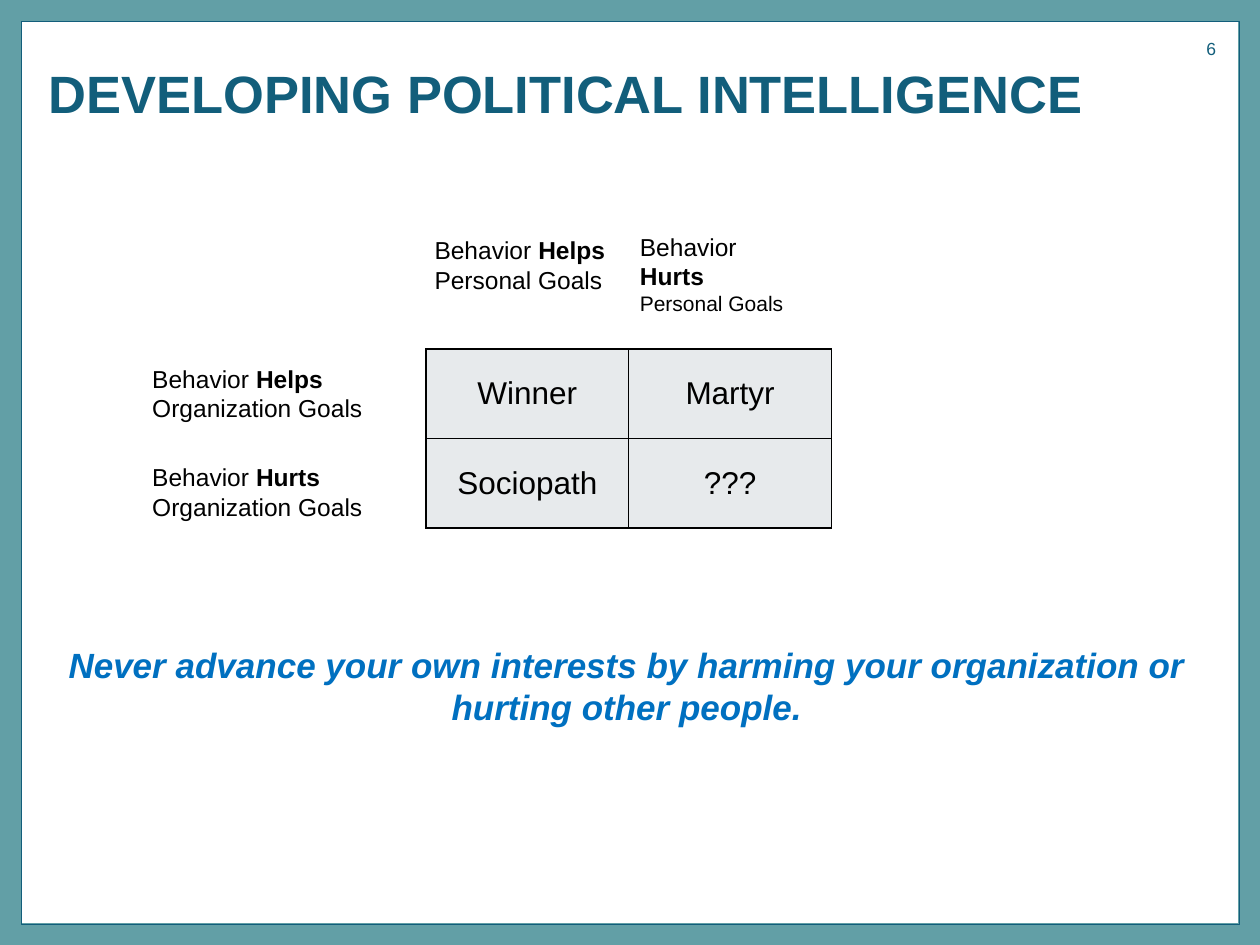
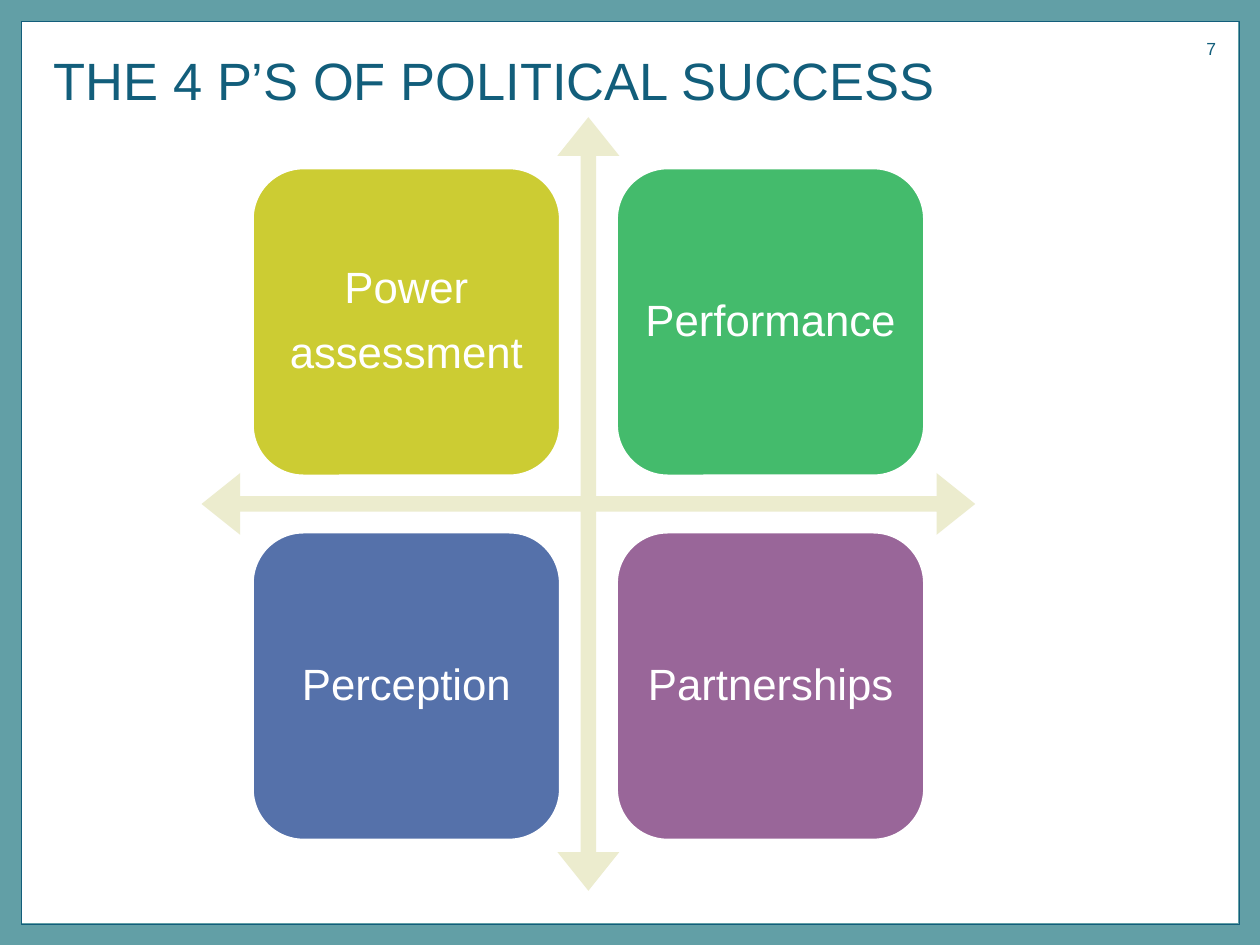
import pptx
import pptx.chart.data
import pptx.dml.color
import pptx.enum.shapes
import pptx.enum.text
import pptx.oxml.ns
import pptx.util
from lxml import etree

Inches, Pt = pptx.util.Inches, pptx.util.Pt
ALIGN, ANCHOR = pptx.enum.text.PP_ALIGN, pptx.enum.text.MSO_ANCHOR
SHAPE = pptx.enum.shapes.MSO_SHAPE

FONT = "Arial"
COLORS = {
    "frame": "629FA6", "title": "125E7B", "text": "000000", "cell": "E7EAEC",
    "quote": "0070C0", "arrow": "ECECCE", "white": "FFFFFF",
    "power": "CCCC33", "performance": "44BB6C",
    "perception": "5571AA", "partnerships": "996699",
}


def rgb(name):
    return pptx.dml.color.RGBColor.from_string(COLORS[name])


def style(paragraph, size, color, align=ALIGN.LEFT, bold=False, italic=False):
    paragraph.alignment = align
    font = paragraph.font
    font.name, font.size, font.bold, font.italic = FONT, Pt(size), bold, italic
    font.color.rgb = rgb(color)


def add_text(slide, box, lines, size, color, anchor=ANCHOR.TOP, wrap=True, **options):
    """Each line is a string or a list of (text, bold) runs."""
    frame = slide.shapes.add_textbox(*map(Inches, box)).text_frame
    frame.word_wrap, frame.vertical_anchor = wrap, anchor
    for index, line in enumerate(lines):
        paragraph = frame.add_paragraph() if index else frame.paragraphs[0]
        for text, bold in [(line, None)] if isinstance(line, str) else line:
            run = paragraph.add_run()
            run.text, run.font.bold = text, bold
        style(paragraph, size, color, **options)
    return frame


def add_shape(slide, kind, box, fill=None, line=None, width=1):
    shape = slide.shapes.add_shape(kind, *map(Inches, box))
    shape.shadow.inherit = False
    if fill:
        shape.fill.solid()
        shape.fill.fore_color.rgb = rgb(fill)
    else:
        shape.fill.background()
    if line:
        shape.line.color.rgb = rgb(line)
        shape.line.width = Pt(width)
    else:
        shape.line.fill.background()
    return shape


def add_base(presentation, title, number, title_box, bold=False):
    """Blank slide with the double frame, title and page number."""
    slide = presentation.slides.add_slide(presentation.slide_layouts[6])
    add_shape(slide, SHAPE.RECTANGLE, (0, 0, 10, 7.5), line="frame", width=25)
    add_shape(slide, SHAPE.RECTANGLE, (0.17, 0.17, 9.67, 7.17), line="title", width=0.75)
    add_text(slide, title_box, [title], 30, "title", ANCHOR.BOTTOM, bold=bold)
    add_text(slide, (9.33, 0.25, 0.42, 0.4), [str(number)], 10, "title", align=ALIGN.RIGHT)
    return slide


def add_borders(cell):
    properties = cell._tc.get_or_add_tcPr()
    for side in ("lnL", "lnR", "lnT", "lnB"):
        line = etree.SubElement(properties, pptx.oxml.ns.qn(f"a:{side}"), w=str(Pt(1)))
        fill = etree.SubElement(line, pptx.oxml.ns.qn("a:solidFill"))
        etree.SubElement(fill, pptx.oxml.ns.qn("a:srgbClr"), val=COLORS["text"])


def add_outcome_table(slide, box, rows):
    table = slide.shapes.add_table(len(rows), len(rows[0]), *map(Inches, box)).table
    table.first_row = table.horz_banding = False
    for row_index, row in enumerate(rows):
        for column_index, text in enumerate(row):
            cell = table.cell(row_index, column_index)
            add_borders(cell)
            cell.fill.solid()
            cell.fill.fore_color.rgb = rgb("cell")
            cell.vertical_anchor = ANCHOR.MIDDLE
            cell.text = text
            style(cell.text_frame.paragraphs[0], 18, "text", ALIGN.CENTER)


def add_behavior_matrix(slide, box):
    """Outcome table with its row and column labels placed around it."""
    left, top, width, height = box
    add_outcome_table(slide, box, [["Winner", "Martyr"], ["Sociopath", "???"]])

    def add_label(offset_x, offset_y, label_width, effect, goals, wrap=True):
        label_box = (left + offset_x, top + offset_y, label_width, 0.57)
        lines = [[("Behavior ", False), (effect, True)], goals]
        return add_text(slide, label_box, lines, 14, "text", wrap=wrap)

    for row, effect in enumerate(("Helps", "Hurts")):
        add_label(-2.27, 0.07 + row * 0.78, 1.88, effect, "Organization Goals", wrap=False)
    add_label(-0.03, -0.95, 1.75, "Helps", "Personal Goals")
    hurts = add_label(1.6, -0.98, 1.48, "Hurts", "Personal Goals")
    hurts.paragraphs[1].font.size = Pt(12)


def add_tile(slide, box, lines, color):
    tile = add_shape(slide, SHAPE.ROUNDED_RECTANGLE, box, color, "white", 2)
    frame = tile.text_frame
    frame.word_wrap, frame.vertical_anchor = True, ANCHOR.MIDDLE
    frame.margin_left = frame.margin_right = Inches(0.08)
    for index, line in enumerate(lines):
        paragraph = frame.add_paragraph() if index else frame.paragraphs[0]
        paragraph.text = line
        paragraph.line_spacing, paragraph.space_after = 0.9, Pt(10)
        style(paragraph, 25, "white", ALIGN.CENTER)


def add_quadrants(slide, box, tiles, margin=0.4, gap=0.44):
    """Four-way arrow with one tile in each quadrant of a square box."""
    left, top, side, _ = box
    arrow = add_shape(slide, SHAPE.QUAD_ARROW, box, "arrow")
    for index, value in enumerate((0.02, 0.04, 0.05)):
        arrow.adjustments[index] = value
    size = (side - 2 * margin - gap) / 2
    for index, (lines, color) in enumerate(tiles):
        row, column = divmod(index, 2)
        tile_box = (left + margin + column * (size + gap),
                    top + margin + row * (size + gap), size, size)
        add_tile(slide, tile_box, lines, color)


def build_intelligence(presentation):
    slide = add_base(presentation, "DEVELOPING POLITICAL INTELLIGENCE", 6,
                     (0.29, -0.16, 9, 1.19), bold=True)
    add_behavior_matrix(slide, (3.38, 2.77, 3.22, 1.42))
    # Closing advice
    add_text(slide, (0.39, 5.06, 9.17, 1.11),
             ["Never advance your own interests by harming your organization or "
              "hurting other people."],
             20, "quote", align=ALIGN.CENTER, bold=True, italic=True)


def build_four_ps(presentation):
    slide = add_base(presentation, "THE 4 P’S OF POLITICAL SUCCESS", 7,
                     (0.33, -0.26, 9, 1.19))
    add_quadrants(slide, (1.6, 0.93, 6.14, 6.14), [
        (["Power", "assessment"], "power"),
        (["Performance"], "performance"),
        (["Perception"], "perception"),
        (["Partnerships"], "partnerships"),
    ])


def main():
    presentation = pptx.Presentation()
    presentation.slide_width, presentation.slide_height = Inches(10), Inches(7.5)
    build_intelligence(presentation)
    build_four_ps(presentation)
    presentation.save("out.pptx")


if __name__ == "__main__":
    main()
